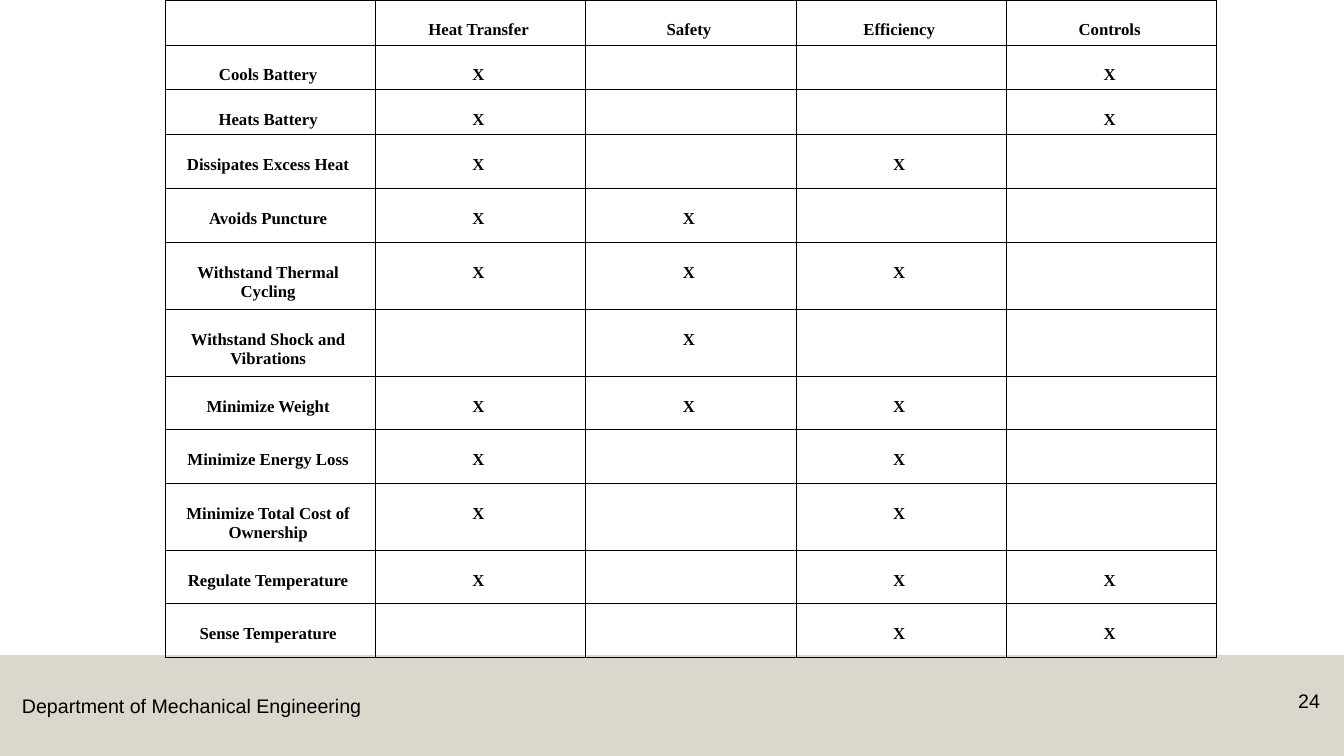
from lxml import etree
from pptx import Presentation
from pptx.dml.color import RGBColor as Rgb
from pptx.enum.shapes import MSO_SHAPE as Shape
from pptx.enum.text import MSO_AUTO_SIZE as Fit, PP_ALIGN as Align
from pptx.oxml.ns import qn
from pptx.util import Emu, Pt

SCALE = 914400 / 100.8
HEX = {"ink": "000000", "band": "B7B09C"}
HEADS = ["", "Heat Transfer", "Safety", "Efficiency", "Controls"]
NEEDS = [
    ("Cools Battery", "X  X", 45),
    ("Heats Battery", "X  X", 45),
    ("Dissipates Excess Heat", "X X ", 54),
    ("Avoids Puncture", "XX  ", 54),
    ("Withstand Thermal Cycling", "XXX ", 67),
    ("Withstand Shock and Vibrations", " X  ", 67),
    ("Minimize Weight", "XXX ", 53),
    ("Minimize Energy Loss", "X X ", 54),
    ("Minimize Total Cost of Ownership", "X X ", 67),
    ("Regulate Temperature", "X XX", 53),
    ("Sense Temperature", "  XX", 54),
]


def px(n):
    return Emu(round(n * SCALE))


def color(name):
    return Rgb.from_string(HEX[name])


def style(para, face, size, bold, align):
    para.alignment = align
    for run in para.runs:
        run.font.name = face
        run.font.size = Pt(size)
        run.font.bold = bold
        run.font.color.rgb = color("ink")


def add_band(slide, x, y, w, h):
    band = slide.shapes.add_shape(Shape.RECTANGLE, px(x), px(y), px(w), px(h))
    band.shadow.inherit = False
    band.line.fill.background()
    band.fill.solid()
    band.fill.fore_color.rgb = color("band")
    tint = next(band.element.spPr.iter(qn("a:srgbClr")))
    etree.SubElement(tint, qn("a:alpha"), val="50000")


def add_label(slide, text, x, y, w, h, align, wrap):
    frame = slide.shapes.add_textbox(px(x), px(y), px(w), px(h)).text_frame
    frame.word_wrap = wrap
    frame.auto_size = Fit.NONE if wrap else Fit.SHAPE_TO_FIT_TEXT
    frame.text = text
    style(frame.paragraphs[0], "Arial", 14, False, align)


def add_edges(cell):
    props = cell._tc.get_or_add_tcPr()
    for side in ("lnL", "lnR", "lnT", "lnB"):
        line = etree.SubElement(props, qn(f"a:{side}"), w=str(Pt(0.75)))
        fill = etree.SubElement(line, qn("a:solidFill"))
        etree.SubElement(fill, qn("a:srgbClr"), val=HEX["ink"])


def fill_cell(cell, text):
    add_edges(cell)
    cell.fill.background()
    if text.strip():
        cell.margin_left, cell.margin_right = px(5), px(9)
        cell.margin_top, cell.margin_bottom = px(21), px(2)
        cell.text_frame.text = text
        style(cell.text_frame.paragraphs[0], "Times New Roman", 12, True, Align.CENTER)


def add_matrix(slide, x, y, w):
    rows = [HEADS] + [[need, *marks] for need, marks, _ in NEEDS]
    highs = [45] + [high for _, _, high in NEEDS]
    frame = slide.shapes.add_table(len(rows), len(HEADS), px(x), px(y), px(w), px(sum(highs)))
    table = frame.table
    table.first_row = table.horz_banding = False
    for r, (texts, high) in enumerate(zip(rows, highs)):
        table.rows[r].height = px(high)
        for c, text in enumerate(texts):
            fill_cell(table.cell(r, c), text)


def main():
    deck = Presentation()
    deck.slide_width, deck.slide_height = px(1344), px(756)
    slide = deck.slides.add_slide(deck.slide_layouts[6])
    add_band(slide, 0, 655, 1344, 101)
    add_label(slide, "Department of Mechanical Engineering", 12, 689, 362, 34, Align.LEFT, False)
    add_label(slide, "24", 1252, 684, 78, 40, Align.RIGHT, True)
    add_matrix(slide, 165, 0, 1052)
    deck.save("out.pptx")


if __name__ == "__main__":
    main()
